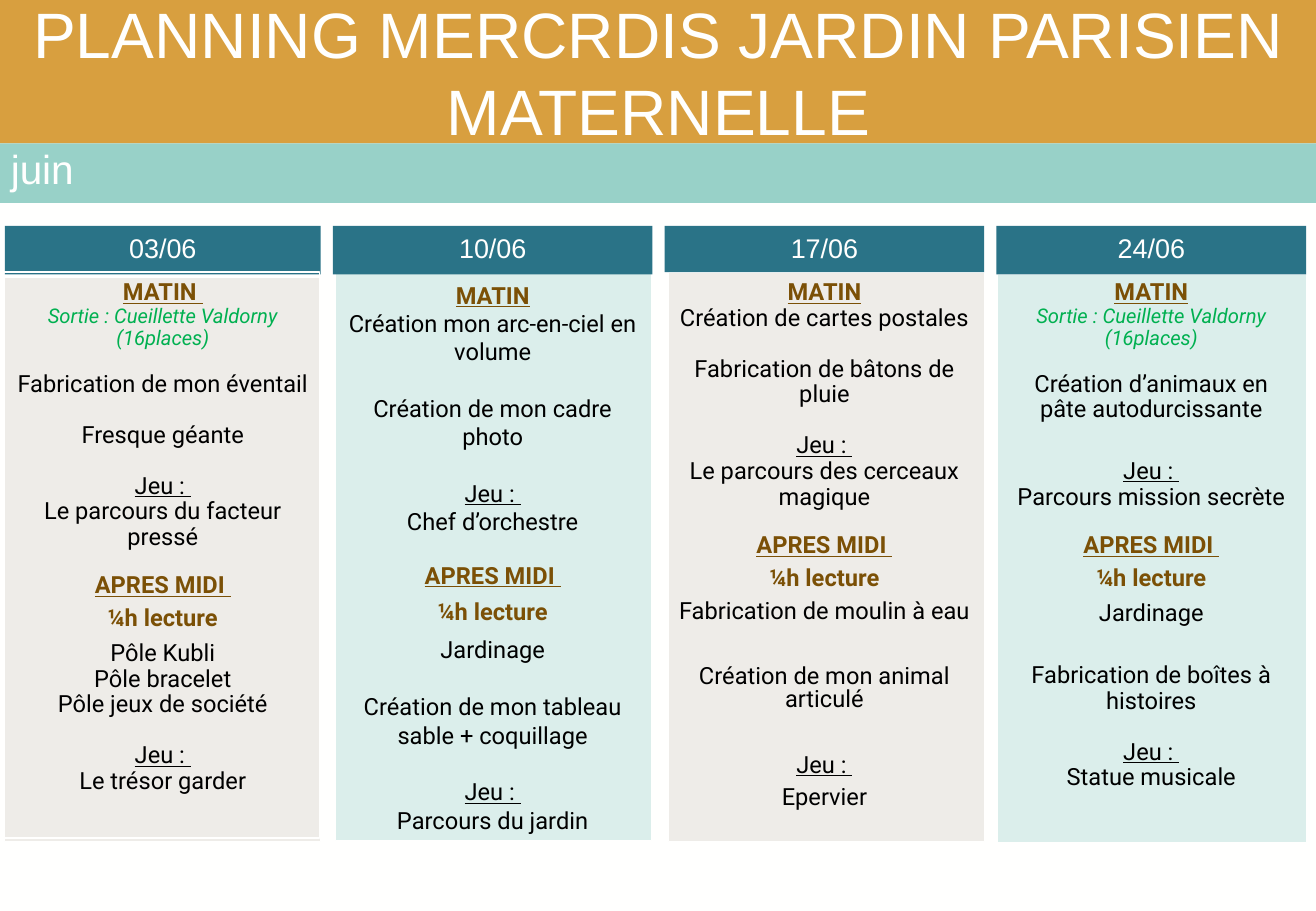
from lxml.etree import SubElement
from pptx import Presentation
from pptx.dml.color import RGBColor
from pptx.enum.shapes import MSO_SHAPE
from pptx.enum.text import MSO_ANCHOR, PP_ALIGN
from pptx.oxml.ns import qn
from pptx.util import Inches, Pt

WHITE, BROWN, GREEN, BLACK = "FFFFFE", "7B5006", "00B050", "000000"
GOLD, MINT, TEAL, SAND = "D89F3F", "98D1C8", "2A7387", "EEECE8"

HEADING = dict(color=BROWN, bold=True, underline=True)
READING = dict(color=BROWN, bold=True, after=6)
OUTING = dict(color=GREEN, italic=True, size=12)


def colour(code):
    return RGBColor.from_string(code)


def add_rect(page, box, fill=None, line=None, opacity=None):
    shape = page.shapes.add_shape(MSO_SHAPE.RECTANGLE, *map(Inches, box))
    shape.shadow.inherit = False
    if fill:
        shape.fill.solid()
        shape.fill.fore_color.rgb = colour(fill)
    else:
        shape.fill.background()
    if opacity:
        tint = shape.fill._xPr.find(qn("a:solidFill"))[0]
        SubElement(tint, qn("a:alpha")).set("val", str(opacity * 1000))
    if line:
        shape.line.color.rgb = colour(line)
        shape.line.width = Pt(0.75)
    else:
        shape.line.fill.background()
    return shape


def write(para, text, size=14, font="Roboto", color=BLACK, bold=False, italic=False,
          underline=False, align=PP_ALIGN.CENTER, spacing=1.0, before=0, after=0):
    para.alignment = align
    para.line_spacing = spacing
    para.space_before = Pt(before)
    para.space_after = Pt(after)
    span = para.add_run()
    span.text = text
    span.font.size = Pt(size)
    span.font.name = font
    span.font.color.rgb = colour(color)
    span.font.bold = bold
    span.font.italic = italic
    span.font.underline = underline


def add_banner(page, box, fill, text, anchor=MSO_ANCHOR.TOP, **style):
    frame = add_rect(page, box, fill).text_frame
    frame.word_wrap = True
    frame.vertical_anchor = anchor
    write(frame.paragraphs[0], text, font="Arial", color=WHITE, **style)


def add_programme(page, box, lines, spacing):
    frame = page.shapes.add_textbox(*map(Inches, box)).text_frame
    frame.word_wrap = True
    for index, (text, style) in enumerate(lines):
        para = frame.add_paragraph() if index else frame.paragraphs[0]
        write(para, text, **{"spacing": spacing, **style})


def add_day(page, box, date, header_height, panel, fill, opacity, lines, spacing):
    left, top, width, height = box
    add_rect(page, panel, fill, WHITE, opacity)
    add_programme(page, (left, top + 0.4, width, height - 0.4), lines, spacing)
    add_banner(page, (left, top, width, header_height), TEAL, date, size=16)


def activity(text, before=0, **style):
    return text, dict(before=before, **style)


def game(name, before, **style):
    return [activity("Jeu : ", before, underline=True, **style), activity(name, **style)]


def afternoon(before, spacing):
    return [("APRES MIDI ", dict(HEADING, before=before, after=6, spacing=spacing)),
            ("¼h lecture", dict(READING, spacing=spacing))]


OUTING_LINE = ("Sortie : Cueillette Valdorny (16places)", OUTING)
GAP, WIDE_GAP, LOOSE_GAP = 15.1, 21.6, 16.8
TIGHT = dict(spacing=0.8, after=6)

FIRST = [
    ("MATIN ", HEADING), OUTING_LINE,
    activity("Fabrication de mon éventail", 13),
    activity("Fresque géante", GAP),
    *game("Le parcours du facteur pressé", GAP),
    *afternoon(GAP, 0.8),
    activity("Pôle Kubli"), activity("Pôle bracelet"), activity("Pôle jeux de société"),
    *game("Le trésor garder", GAP),
]
SECOND = [
    ("MATIN", HEADING),
    activity("Création mon arc-en-ciel en volume"),
    activity("Création de mon cadre photo", LOOSE_GAP),
    *game("Chef d’orchestre", LOOSE_GAP),
    *afternoon(LOOSE_GAP, 0.9),
    activity("Jardinage"),
    activity("Création de mon tableau sable + coquillage", LOOSE_GAP),
    *game("Parcours du jardin", LOOSE_GAP),
]
THIRD = [
    ("MATIN", HEADING),
    activity("Création de cartes postales"),
    activity("Fabrication de bâtons de pluie", GAP),
    *game("Le parcours des cerceaux magique", GAP),
    *afternoon(GAP, 0.8),
    activity("Fabrication de moulin à eau", **TIGHT),
    activity("Création de mon animal articulé", 19.4, **TIGHT),
    *game("Epervier", 19.4, **TIGHT),
]
FOURTH = [
    ("MATIN", HEADING), OUTING_LINE,
    activity("Création d’animaux en pâte autodurcissante", 13),
    *game("Parcours mission secrète", WIDE_GAP),
    *afternoon(GAP, 0.8),
    activity("Jardinage"),
    activity("Fabrication de boîtes à histoires", WIDE_GAP),
    *game("Statue musicale", GAP),
]

DAYS = [
    ("03/06", 0.04, 2.6, 0.4, (0.04, 2.28, 2.6, 4.65), SAND, None, FIRST, 0.9),
    ("10/06", 2.74, 2.63, 0.4, (2.76, 2.24, 2.6, 4.68), MINT, 35, SECOND, 1.0),
    ("17/06", 5.47, 2.63, 0.38, (5.5, 2.24, 2.6, 4.69), SAND, None, THIRD, 0.9),
    ("24/06", 8.2, 2.55, 0.4, (8.21, 2.26, 2.54, 4.68), MINT, 35, FOURTH, 0.9),
]


def build_planning(deck):
    page = deck.slides.add_slide(deck.slide_layouts[6])
    page.background.fill.solid()
    page.background.fill.fore_color.rgb = colour(WHITE)
    add_banner(page, (0, 0, 10.84, 1.18), GOLD, "PLANNING MERCRDIS JARDIN PARISIEN MATERNELLE",
               anchor=MSO_ANCHOR.MIDDLE, size=38)
    add_banner(page, (-0.01, 1.18, 10.85, 0.49), MINT, "juin",
               size=24, align=PP_ALIGN.LEFT, spacing=0.9)
    for date, left, width, header_height, *content in DAYS:
        add_day(page, (left, 1.86, width, 5.06), date, header_height, *content)
    add_rect(page, (0.03, 2.24, 2.6, 4.66), line=WHITE)


def main():
    deck = Presentation()
    deck.slide_width = Inches(10.83)
    deck.slide_height = Inches(7.5)
    build_planning(deck)
    deck.save("out.pptx")


if __name__ == "__main__":
    main()
